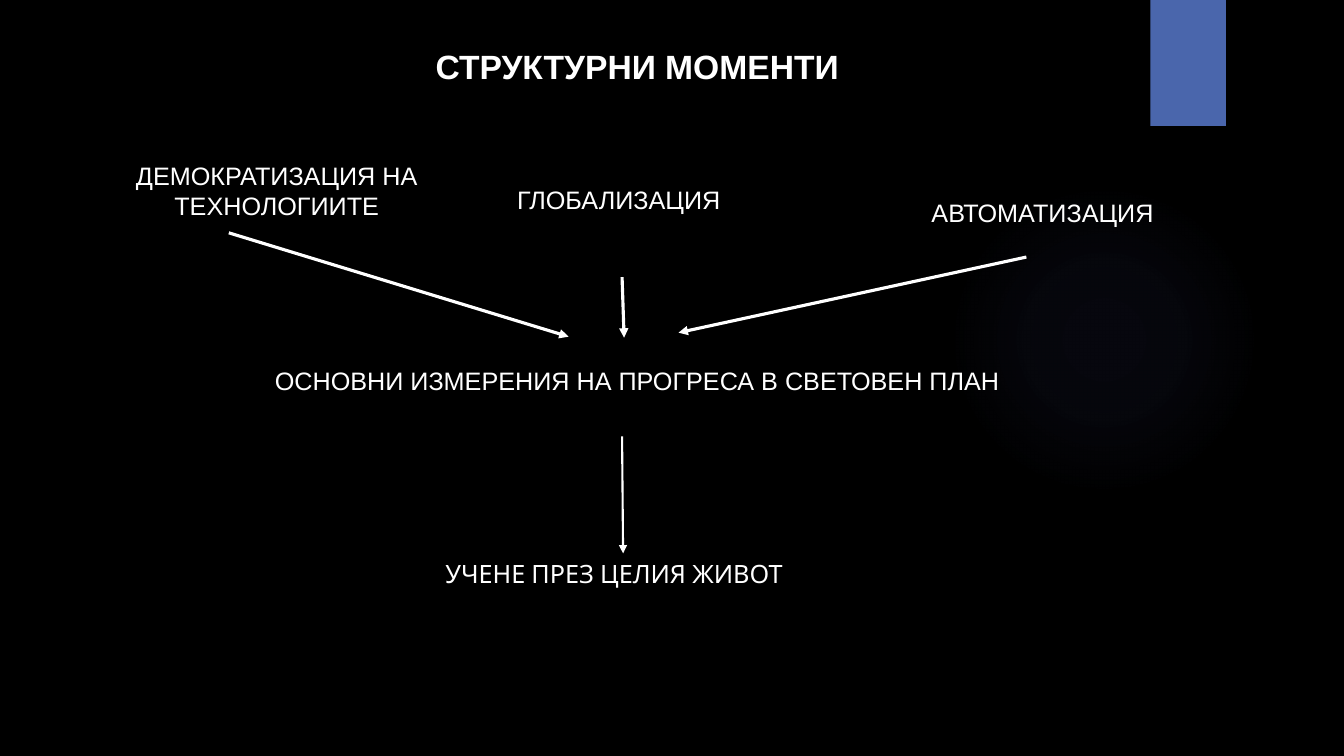
"""Build the slide on structural moments leading to lifelong learning."""
from lxml.etree import SubElement
from pptx import Presentation
from pptx.dml.color import RGBColor
from pptx.enum.shapes import MSO_CONNECTOR, MSO_SHAPE
from pptx.enum.text import PP_ALIGN
from pptx.oxml import parse_xml
from pptx.oxml.ns import nsdecls, qn
from pptx.util import Inches, Pt

THEME = {
    "background": RGBColor.from_string("000000"),
    "text": RGBColor.from_string("FFFFFF"),
    "accent": RGBColor.from_string("4A66AC"),
    "glow": "5C64B7",
    "font": "Arial",
    "closing_font": "League Spartan",
    "title_size": Pt(24),
    "body_size": Pt(18),
    "thick": Pt(2.25),
    "thin": Pt(1.5),
}
TITLE = {"size": THEME["title_size"], "name": THEME["font"], "bold": True}
BODY = {"size": THEME["body_size"], "name": THEME["font"]}
CLOSING = {"size": THEME["body_size"], "name": THEME["closing_font"]}
CENTER, LEFT = PP_ALIGN.CENTER, PP_ALIGN.LEFT

LABELS = [
    ("СТРУКТУРНИ МОМЕНТИ", (1.81, 0.41, 9.02, 0.5), CENTER, TITLE),
    ("ДЕМОКРАТИЗАЦИЯ НА ТЕХНОЛОГИИТЕ", (0.92, 1.54, 3.65, 0.71), CENTER, BODY),
    ("ГЛОБАЛИЗАЦИЯ", (5.03, 1.78, 3.39, 0.4), LEFT, BODY),
    ("АВТОМАТИЗАЦИЯ", (9.14, 1.91, 2.75, 0.4), LEFT, BODY),
    ("ОСНОВНИ ИЗМЕРЕНИЯ НА ПРОГРЕСА В СВЕТОВЕН ПЛАН",
     (2.46, 3.58, 7.72, 0.4), CENTER, BODY),
    ("УЧЕНЕ ПРЕЗ ЦЕЛИЯ ЖИВОТ", (2.74, 5.49, 6.7, 0.4), CENTER, CLOSING),
]
ARROWS = [
    ((2.27, 2.31), (5.64, 3.34), THEME["thick"]),
    ((10.18, 2.55), (6.73, 3.3), THEME["thick"]),
    ((6.17, 2.75), (6.19, 3.35), THEME["thick"]),
    ((6.17, 4.33), (6.18, 5.49), THEME["thin"]),
]
GLOW_BOX = (9.41, 1.83, 3.08, 3.08)
GLOW_STOPS = [(0, 7), (36, 6), (69, 0)]
RIBBON_BOX = (11.41, 0, 0.75, 1.25)


def add_plain_shape(slide, kind, box):
    shape = slide.shapes.add_shape(kind, *map(Inches, box))
    shape.shadow.inherit = False
    shape.line.fill.background()
    return shape


def add_glow(slide):
    shape = add_plain_shape(slide, MSO_SHAPE.OVAL, GLOW_BOX)
    stops = "".join(
        f'<a:gs pos="{position * 1000}"><a:srgbClr val="{THEME["glow"]}">'
        f'<a:alpha val="{opacity * 1000}"/></a:srgbClr></a:gs>'
        for position, opacity in GLOW_STOPS
    )
    gradient = parse_xml(
        f'<a:gradFill {nsdecls("a")}><a:gsLst>{stops}</a:gsLst><a:path path="circle">'
        '<a:fillToRect l="50000" t="50000" r="50000" b="50000"/></a:path></a:gradFill>'
    )
    shape._element.spPr.find(qn("a:prstGeom")).addnext(gradient)


def add_ribbon(slide):
    shape = add_plain_shape(slide, MSO_SHAPE.RECTANGLE, RIBBON_BOX)
    shape.fill.solid()
    shape.fill.fore_color.rgb = THEME["accent"]


def add_label(slide, text, box, alignment, formats):
    frame = slide.shapes.add_textbox(*map(Inches, box)).text_frame
    frame.word_wrap = True
    paragraph = frame.paragraphs[0]
    paragraph.text = text
    paragraph.alignment = alignment
    font = paragraph.runs[0].font
    for name, value in formats.items():
        setattr(font, name, value)
    font.color.rgb = THEME["text"]


def add_arrow(slide, start, end, width):
    connector = slide.shapes.add_connector(
        MSO_CONNECTOR.STRAIGHT, *map(Inches, start + end))
    connector.line.width = width
    connector.line.color.rgb = THEME["text"]
    SubElement(connector.line._get_or_add_ln(), qn("a:tailEnd"), type="triangle")
    SubElement(connector._element.spPr, qn("a:effectLst"))


def main():
    presentation = Presentation()
    presentation.slide_width = Inches(13.33)
    presentation.slide_height = Inches(7.5)
    slide = presentation.slides.add_slide(presentation.slide_layouts[6])
    slide.background.fill.solid()
    slide.background.fill.fore_color.rgb = THEME["background"]
    add_glow(slide)
    add_ribbon(slide)
    for label in LABELS:
        add_label(slide, *label)
    for arrow in ARROWS:
        add_arrow(slide, *arrow)
    presentation.save("out.pptx")


if __name__ == "__main__":
    main()
